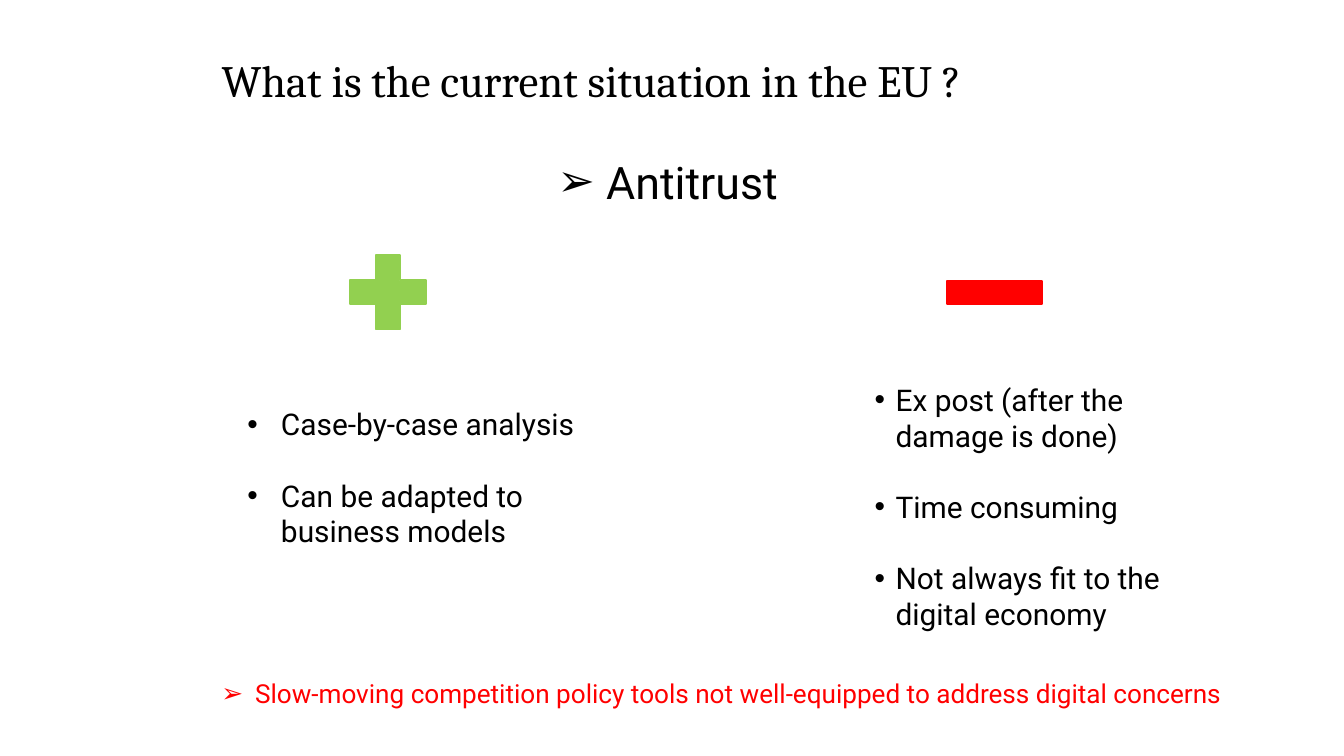
from typing import NamedTuple

from pptx import Presentation
from pptx.dml.color import RGBColor
from pptx.enum.shapes import MSO_SHAPE as Preset
from pptx.enum.text import MSO_AUTO_SIZE as AutoSize, PP_ALIGN as Align
from pptx.oxml.ns import qn
from pptx.util import Emu, Pt
from lxml.etree import SubElement

EMU_PER_PX = 9525
BLACK, GREEN, RED = "000000", "92D050", "FF0000"


class Box(NamedTuple):
    left: int
    top: int
    width: int
    height: int


class Passage(NamedTuple):
    box: Box
    lines: tuple[str, ...]
    size: int
    font: str = "Roboto"
    color: str = BLACK
    bullet: str = ""
    indent: int = 0
    gap: int = 0
    align: Align = Align.LEFT


class Sign(NamedTuple):
    box: Box
    preset: Preset
    color: str


PASSAGES = (
    Passage(Box(307, 71, 1220, 87), ("What is the current situation in the EU ?",),
            48, font="Cambria"),
    Passage(Box(787, 216, 345, 87), (" Antitrust",), 48, bullet="➢", indent=30),
    Passage(Box(344, 575, 497, 217),
            ("Case-by-case analysis", "Can be adapted to business models"),
            32, bullet="•", indent=48, gap=38),
    Passage(Box(1240, 540, 508, 372),
            ("Ex post (after the damage is done)", "Time consuming",
             "Not always fit to the digital economy"),
            32, bullet="•", indent=30, gap=38),
    Passage(Box(307, 963, 1470, 100),
            ("Slow-moving competition policy tools not well-equipped "
             "to address digital concerns",),
            28, color=RED, bullet="➢", indent=48, align=Align.JUSTIFY),
)
SIGNS = (
    Sign(Box(480, 345, 148, 145), Preset.MATH_PLUS, GREEN),
    Sign(Box(1328, 348, 185, 140), Preset.MATH_MINUS, RED),
)


def px(length: int) -> Emu:
    return Emu(length * EMU_PER_PX)


def rgb(color: str) -> RGBColor:
    return RGBColor.from_string(color)


def apply_format(target, values: dict) -> None:
    for name, value in values.items():
        setattr(target, name, value)


def add_bullet(paragraph, bullet: str, indent: int) -> None:
    properties = paragraph._p.get_or_add_pPr()
    properties.set("marL", str(px(indent)))
    properties.set("indent", str(px(-indent)))
    SubElement(properties, qn("a:buFont")).set("typeface", "Arial")
    SubElement(properties, qn("a:buChar")).set("char", bullet)


def draw_passage(slide, passage: Passage) -> None:
    frame = slide.shapes.add_textbox(*map(px, passage.box)).text_frame
    apply_format(frame, {"word_wrap": True, "auto_size": AutoSize.SHAPE_TO_FIT_TEXT})
    for number, line in enumerate(passage.lines):
        paragraph = frame.add_paragraph() if number else frame.paragraphs[0]
        apply_format(paragraph, {"alignment": passage.align,
                                 "space_before": Pt(passage.gap if number else 0)})
        if passage.bullet:
            add_bullet(paragraph, passage.bullet, passage.indent)
        run = paragraph.add_run()
        run.text = line
        apply_format(run.font, {"name": passage.font, "size": Pt(passage.size)})
        run.font.color.rgb = rgb(passage.color)


def draw_sign(slide, sign: Sign) -> None:
    shape = slide.shapes.add_shape(sign.preset, *map(px, sign.box))
    shape.shadow.inherit = False
    shape.fill.solid()
    shape.fill.fore_color.rgb = rgb(sign.color)
    shape.line.color.rgb = rgb(sign.color)
    shape.line.width = Pt(2)


def main() -> None:
    deck = Presentation()
    apply_format(deck, {"slide_width": px(1920), "slide_height": px(1080)})
    slide = deck.slides.add_slide(deck.slide_layouts[6])
    for passage in PASSAGES[:2]:
        draw_passage(slide, passage)
    for sign in SIGNS:
        draw_sign(slide, sign)
    for passage in PASSAGES[2:]:
        draw_passage(slide, passage)
    deck.save("out.pptx")


if __name__ == "__main__":
    main()
